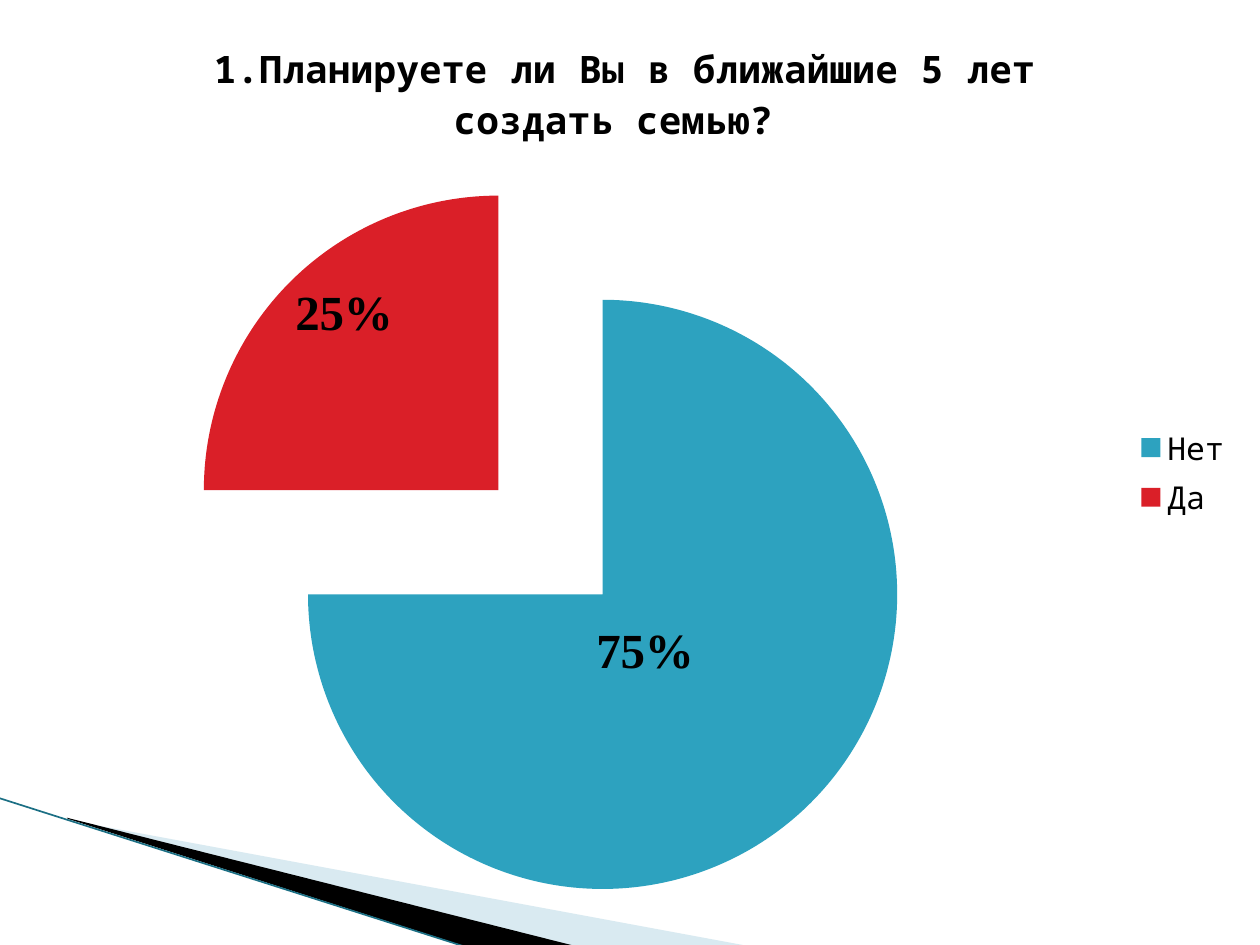
from dataclasses import dataclass

from lxml.etree import SubElement
from pptx import Presentation
from pptx.chart.data import CategoryChartData
from pptx.dml.color import RGBColor as Color
from pptx.enum.chart import XL_CHART_TYPE as ChartType
from pptx.enum.chart import XL_LABEL_POSITION as LabelPosition
from pptx.enum.chart import XL_LEGEND_POSITION as LegendPosition
from pptx.enum.shapes import MSO_CONNECTOR as Connector
from pptx.oxml import parse_xml
from pptx.oxml.ns import nsdecls, qn
from pptx.util import Pt


@dataclass(frozen=True)
class Theme:
    """Colours, fonts and type sizes of the slide."""
    text: Color = Color.from_string("000000")
    no: Color = Color.from_string("2DA2BF")
    yes: Color = Color.from_string("DA1F28")
    pale: Color = Color.from_string("A0CBDC")
    edge: Color = Color.from_string("1B6F84")
    font: str = "Noto Sans Mono"
    label_font: str = "Times New Roman"
    title_size: float = 21.6
    legend_size: float = 18
    label_size: float = 28


THEME = Theme()
QUESTION = "1.Планируете ли Вы в ближайшие 5 лет создать семью? "
ANSWERS = (("Нет", 0.75, THEME.no), ("Да", 0.25, THEME.yes))


def style_font(font, name, size, bold):
    """Give a font its typeface, size, weight and the text colour."""
    font.name, font.size, font.bold = name, Pt(size), bold
    font.color.rgb = THEME.text


def manual_layout(**values):
    """Return a manual chart layout element."""
    parts = "".join(f'<c:{key} val="{value}"/>' for key, value in values.items())
    return parse_xml(f'<c:layout {nsdecls("c")}><c:manualLayout>{parts}'
                     '</c:manualLayout></c:layout>')


def add_wedge(slide, box, points, color, opacity=100):
    """Draw a filled polygon with points relative to the box."""
    left, top = box[:2]
    corners = [(Pt(left + x), Pt(top + y)) for x, y in points]
    builder = slide.shapes.build_freeform(*corners[0], scale=1.0)
    builder.add_line_segments(corners[1:], close=True)
    shape = builder.convert_to_shape()
    shape.shadow.inherit = False
    shape.line.fill.background()
    shape.fill.solid()
    shape.fill.fore_color.rgb = color
    if opacity < 100:
        fill = shape.fill._xPr.find(qn("a:solidFill"))
        SubElement(fill[0], qn("a:alpha")).set("val", str(opacity * 1000))


def add_corner(slide, box):
    """Place the decorative wedges and edge line in the lower left corner."""
    left, top, width, height = box
    add_wedge(slide, box, [(39.6, 12.7), (428.4, 84.7), (328.3, 84.7), (39.6, 12)],
              THEME.pale, 40)
    add_wedge(slide, box, [(38.2, 11.3), (329, 84.7), (267.8, 85.4), (38.9, 12)],
              THEME.text)
    edge = slide.shapes.add_connector(Connector.STRAIGHT, Pt(left - 0.7), Pt(top),
                                      Pt(left + 267.1), Pt(top + height))
    edge.line.color.rgb = THEME.edge
    edge.line.width = Pt(0.95)
    SubElement(edge._element.spPr, qn("a:effectLst"))


def style_series(series):
    """Explode and colour the slices and label them with their values."""
    series.format.line.fill.background()
    series._element.find(qn("c:spPr")).addnext(
        parse_xml(f'<c:explosion {nsdecls("c")} val="25"/>'))
    for index, (_, _, color) in enumerate(ANSWERS):
        point = series.points[index].format
        point.fill.solid()
        point.fill.fore_color.rgb = color
        point.line.fill.background()

    labels = series.data_labels
    labels.show_value = True
    labels.number_format, labels.number_format_is_linked = "0%", False
    labels.position = LabelPosition.INSIDE_END
    style_font(labels.font, THEME.label_font, THEME.label_size, True)

    label = series.points[0].data_label
    label.text_frame.text = "75%"
    style_font(label.text_frame.paragraphs[0].runs[0].font,
               THEME.label_font, THEME.label_size, True)
    label.position = LabelPosition.CENTER
    element = labels._element.find(qn("c:dLbl"))
    for layout in element.findall(qn("c:layout")):
        element.remove(layout)
    element.find(qn("c:idx")).addnext(manual_layout(x=-0.05, y=-0.05))


def add_pie(slide, box):
    """Place the pie chart of answers in the box."""
    data = CategoryChartData(number_format="0%")
    data.categories = [name for name, _, _ in ANSWERS]
    data.add_series(QUESTION, [share for _, share, _ in ANSWERS])
    chart = slide.shapes.add_chart(ChartType.PIE, *map(Pt, box), data).chart
    style_font(chart.font, THEME.font, THEME.legend_size, False)

    chart.has_title = True
    title = chart.chart_title.text_frame
    title.text = QUESTION
    style_font(title.paragraphs[0].runs[0].font, THEME.font, THEME.title_size, True)

    chart.has_legend = True
    chart.legend.position = LegendPosition.RIGHT
    chart.legend.include_in_layout = False
    style_font(chart.legend.font, THEME.font, THEME.legend_size, False)

    plot = chart.plots[0]
    plot.vary_by_categories = True
    style_series(plot.series[0])
    area = plot._element.getparent()
    for layout in area.findall(qn("c:layout")):
        area.remove(layout)
    area.insert(0, manual_layout(layoutTarget="inner", xMode="edge", yMode="edge",
                                 x=0.14, y=0.18, w=0.6, h=0.79))


def main():
    """Build the slide and save it."""
    presentation = Presentation()
    presentation.slide_width, presentation.slide_height = Pt(720), Pt(540)
    slide = presentation.slides.add_slide(presentation.slide_layouts[6])
    add_corner(slide, (0, 456, 428.4, 85.4))
    add_pie(slide, (2.9, 3.6, 708.5, 532.8))
    presentation.save("out.pptx")


if __name__ == "__main__":
    main()
